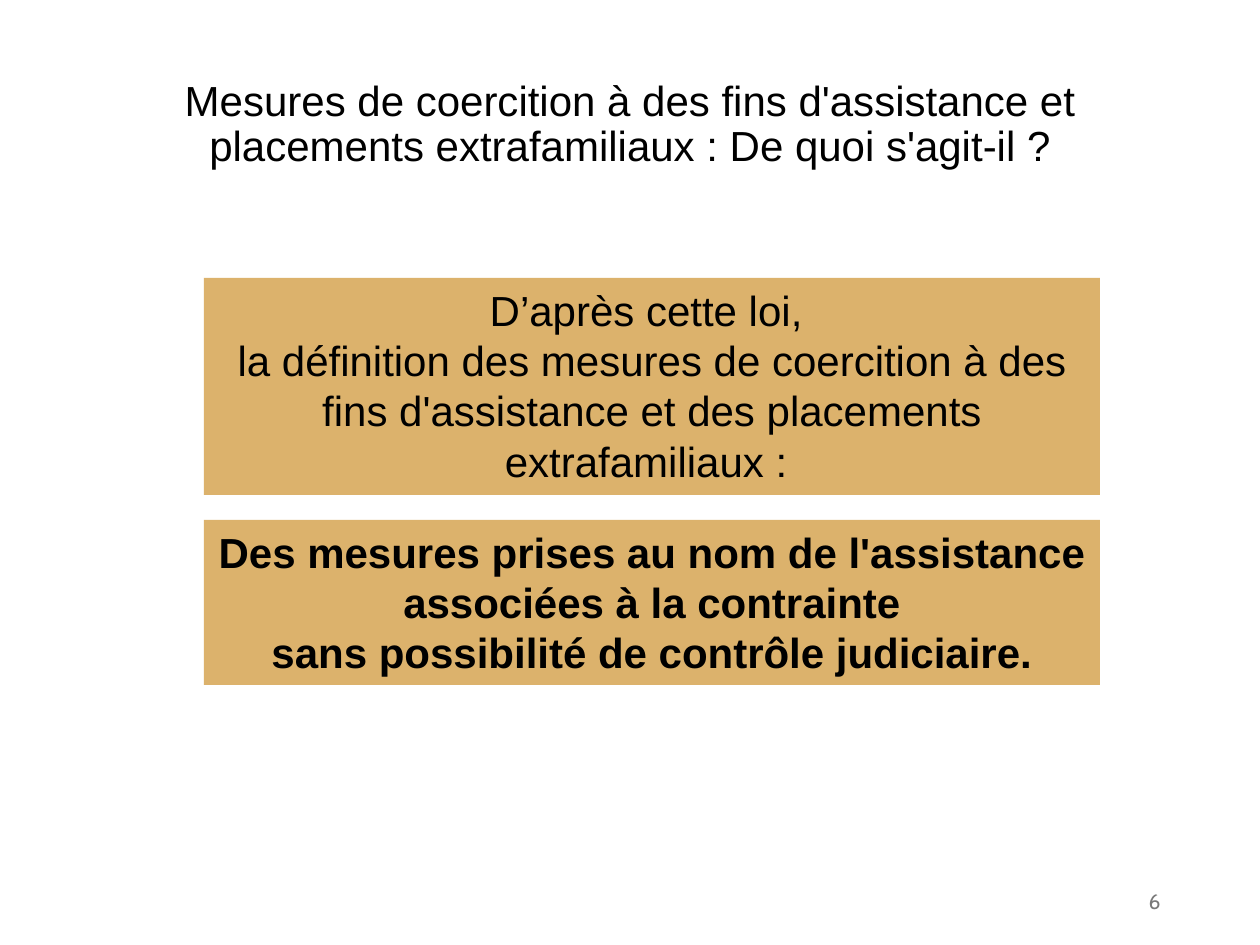
from pptx import Presentation
from pptx import util as u
from pptx.dml.color import RGBColor
from pptx.enum import shapes, text

SAND = RGBColor(0xDC, 0xB2, 0x6C)
BLACK = RGBColor(0, 0, 0)
GREY = RGBColor(0x79, 0x79, 0x79)
PX_PER_INCH = 126
BOX_LEFT, BOX_WIDTH = 204, 896


def px(n):
    """Turn pixels into EMU."""
    return u.Emu(round(n * u.Inches(1) / PX_PER_INCH))


def write(s, lines, align=text.PP_ALIGN.CENTER, anchor=text.MSO_ANCHOR.TOP,
          size=24, font="Arial", color=BLACK, bold=False, spacing=None):
    """Fill a shape with one formatted paragraph per line."""
    tf = s.text_frame
    tf.word_wrap = True
    tf.vertical_anchor = anchor
    tf.text = "\n".join(lines)
    for p in tf.paragraphs:
        p.alignment = align
        if spacing:
            p.line_spacing = spacing
        for r in p.runs:
            r.font.name = font
            r.font.size = u.Pt(size)
            r.font.bold = bold
            r.font.color.rgb = color


def add_label(slide, x, y, w, h, line, **style):
    """Add a vertically centred text box."""
    s = slide.shapes.add_textbox(px(x), px(y), px(w), px(h))
    write(s, [line], anchor=text.MSO_ANCHOR.MIDDLE, **style)


def add_panel(slide, y, h, lines, bold=False):
    """Add a sand-coloured panel with centred text."""
    s = slide.shapes.add_shape(shapes.MSO_SHAPE.RECTANGLE,
                               px(BOX_LEFT), px(y), px(BOX_WIDTH), px(h))
    s.shadow.inherit = False
    s.fill.solid()
    s.fill.fore_color.rgb = SAND
    s.line.fill.background()
    write(s, lines, bold=bold)
    s.text_frame.auto_size = text.MSO_AUTO_SIZE.SHAPE_TO_FIT_TEXT


def main():
    """Build the slide and save it."""
    prs = Presentation()
    prs.slide_width, prs.slide_height = u.Inches(10), u.Inches(7.5)
    slide = prs.slides.add_slide(prs.slide_layouts[6])
    add_label(slide, 87, 50, 1086, 151,
              "Mesures de coercition à des fins d'assistance et placements "
              "extrafamiliaux : De quoi s'agit-il ?", spacing=0.9)
    add_panel(slide, 278, 217, [
        "D’après cette loi, ",
        "la définition des mesures de coercition à des fins d'assistance "
        "et des placements extrafamiliaux : "])
    add_panel(slide, 520, 165, [
        "Des mesures prises au nom de l'assistance",
        "associées à la contrainte",
        " sans possibilité de contrôle judiciaire. "], bold=True)
    add_label(slide, 890, 876, 283, 50, "6", align=text.PP_ALIGN.RIGHT,
              size=12, font="Cabin", color=GREY)
    prs.save("out.pptx")


if __name__ == "__main__":
    main()
